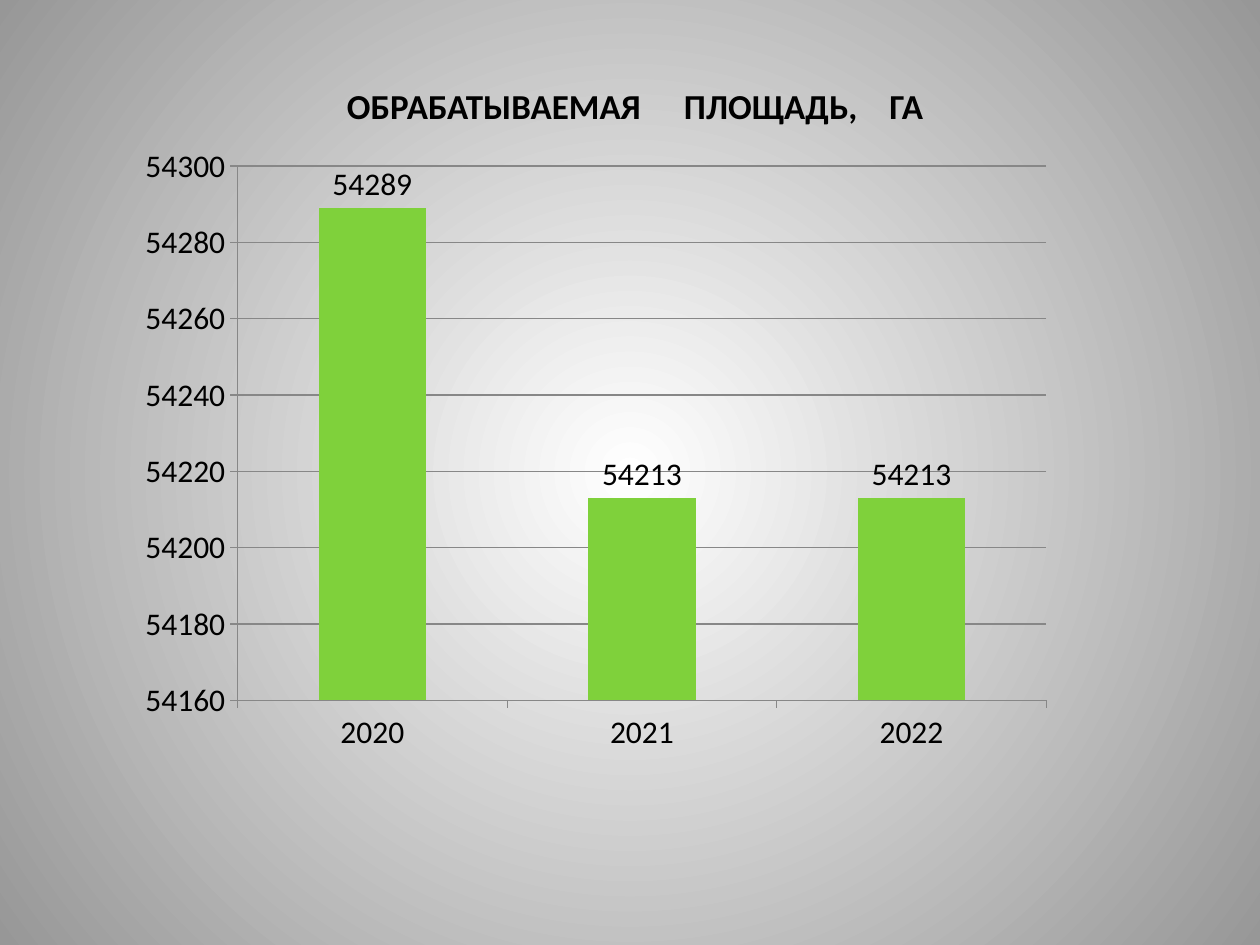
import pptx
import pptx.chart.data
import pptx.dml.color
import pptx.enum.chart
import pptx.enum.text
import pptx.oxml
import pptx.oxml.ns
import pptx.util
from lxml import etree

PX = pptx.util.Inches(1) // 126
FONT = "Calibri"
COLORS = {
    "text": "000000",
    "center": "FFFFFF",
    "edge": "979797",
    "bar": "7FD13B",
    "grid": "878787",
}


def rgb(name):
    return pptx.dml.color.RGBColor.from_string(COLORS[name])


def set_values(target, values):
    for name, value in values.items():
        setattr(target, name, value)


deck = pptx.Presentation()
set_values(deck, {"slide_width": 1260 * PX, "slide_height": 945 * PX})
page = deck.slides.add_slide(deck.slide_layouts[5])

# Background: circular gradient from the centre
fill = page.background.fill
fill.gradient()
for stop, name in zip(fill.gradient_stops, ("center", "edge")):
    stop.color.rgb = rgb(name)
linear = page.background._cSld.find(".//" + pptx.oxml.ns.qn("a:lin"))
circle = pptx.oxml.parse_xml(
    f'<a:path {pptx.oxml.ns.nsdecls("a")} path="circle">'
    '<a:fillToRect l="50000" t="50000" r="50000" b="50000"/></a:path>'
)
linear.getparent().replace(linear, circle)

# Column chart
data = pptx.chart.data.CategoryChartData()
data.categories = ["2020", "2021", "2022"]
data.add_series("Series 1", (54289, 54213, 54213))
chart = page.shapes.add_chart(
    pptx.enum.chart.XL_CHART_TYPE.COLUMN_CLUSTERED,
    59 * PX, 137 * PX, 1131 * PX, 709 * PX, data,
).chart
set_values(chart, {"has_title": False, "has_legend": False})
set_values(chart.font, {"name": FONT, "size": pptx.util.Pt(18)})
chart.font.color.rgb = rgb("text")

plot = chart.plots[0]
set_values(plot, {"gap_width": 150, "vary_by_categories": False, "has_data_labels": True})
set_values(plot.data_labels, {
    "show_value": True,
    "position": pptx.enum.chart.XL_LABEL_POSITION.OUTSIDE_END,
})
bars = plot.series[0].format.fill
bars.solid()
bars.fore_color.rgb = rgb("bar")

# Axes and gridlines
set_values(chart.value_axis, {
    "minimum_scale": 54160,
    "maximum_scale": 54300,
    "major_unit": 20,
    "has_major_gridlines": True,
})
for axis in (chart.category_axis, chart.value_axis):
    axis.major_tick_mark = pptx.enum.chart.XL_TICK_MARK.OUTSIDE
lines = (chart.category_axis, chart.value_axis, chart.value_axis.major_gridlines)
for line in (part.format.line for part in lines):
    line.color.rgb = rgb("grid")
    line.width = pptx.util.Pt(0.75)

# Inner plot area as fractions of the chart
area = chart._chartSpace.chart.plotArea
for old in area.findall(pptx.oxml.ns.qn("c:layout")):
    area.remove(old)
layout = etree.Element(pptx.oxml.ns.qn("c:layout"))
manual = etree.SubElement(layout, pptx.oxml.ns.qn("c:manualLayout"))
for tag, value in {
    "layoutTarget": "inner", "xMode": "edge", "yMode": "edge",
    "x": "0.158", "y": "0.041", "w": "0.715", "h": "0.754",
}.items():
    etree.SubElement(manual, pptx.oxml.ns.qn(f"c:{tag}"), val=value)
area.insert(0, layout)

# Title, with widened spaces between its words
title = page.shapes.title
set_values(title, {"left": 295 * PX, "top": 78 * PX, "width": 680 * PX, "height": 55 * PX})
set_values(title.text_frame, {
    "word_wrap": True,
    "auto_size": pptx.enum.text.MSO_AUTO_SIZE.NONE,
    "vertical_anchor": pptx.enum.text.MSO_ANCHOR.TOP,
})
para = title.text_frame.paragraphs[0]
para.alignment = pptx.enum.text.PP_ALIGN.CENTER
for text, spacing in (
    ("ОБРАБАТЫВАЕМАЯ", 0), (" ", 2000), ("ПЛОЩАДЬ,", 0), (" ", 1360), ("ГА", 0),
):
    span = para.add_run()
    span.text = text
    set_values(span.font, {"name": FONT, "size": pptx.util.Pt(20), "bold": True})
    span.font.color.rgb = rgb("text")
    if spacing:
        span.font._element.set("spc", str(spacing))

deck.save("out.pptx")
